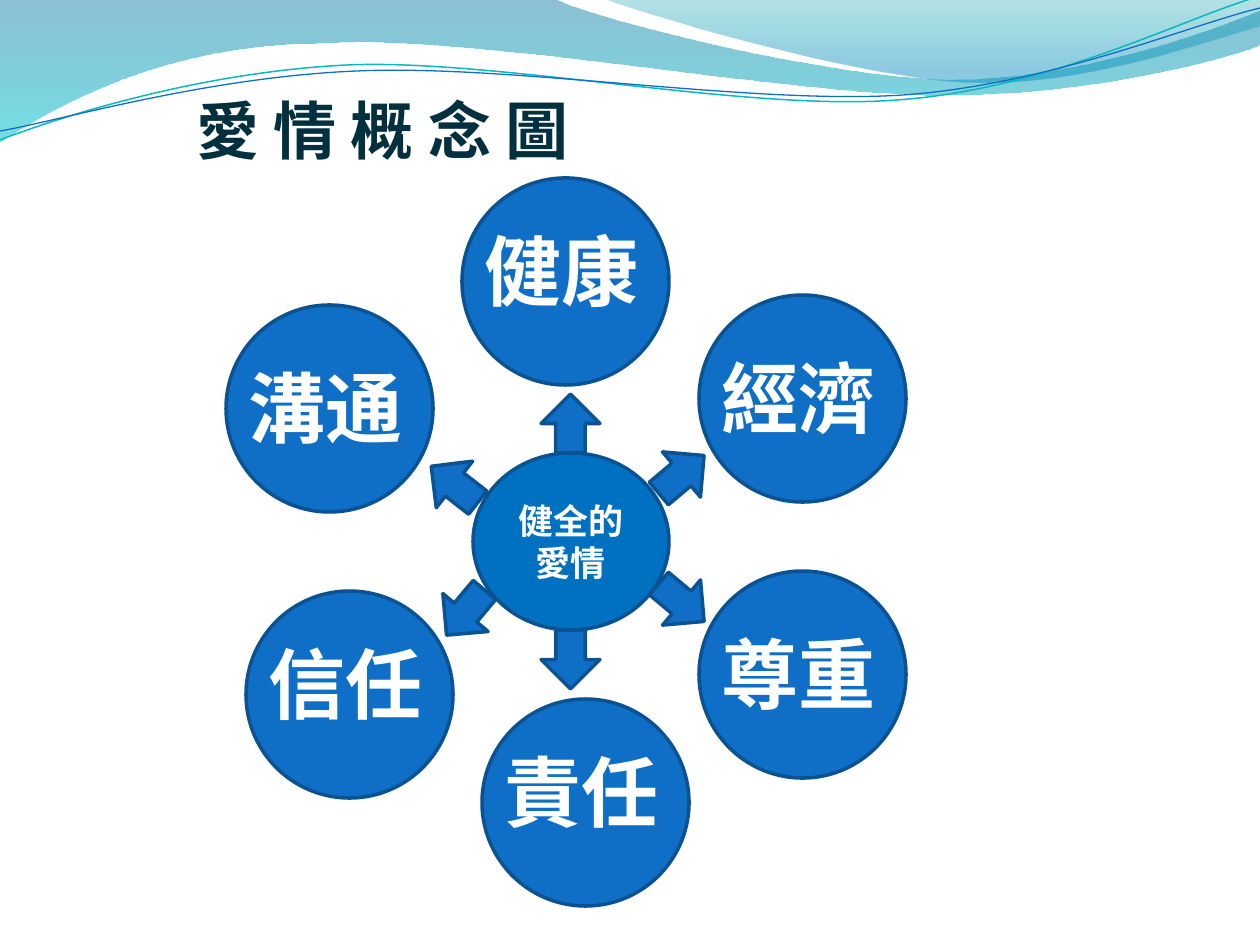
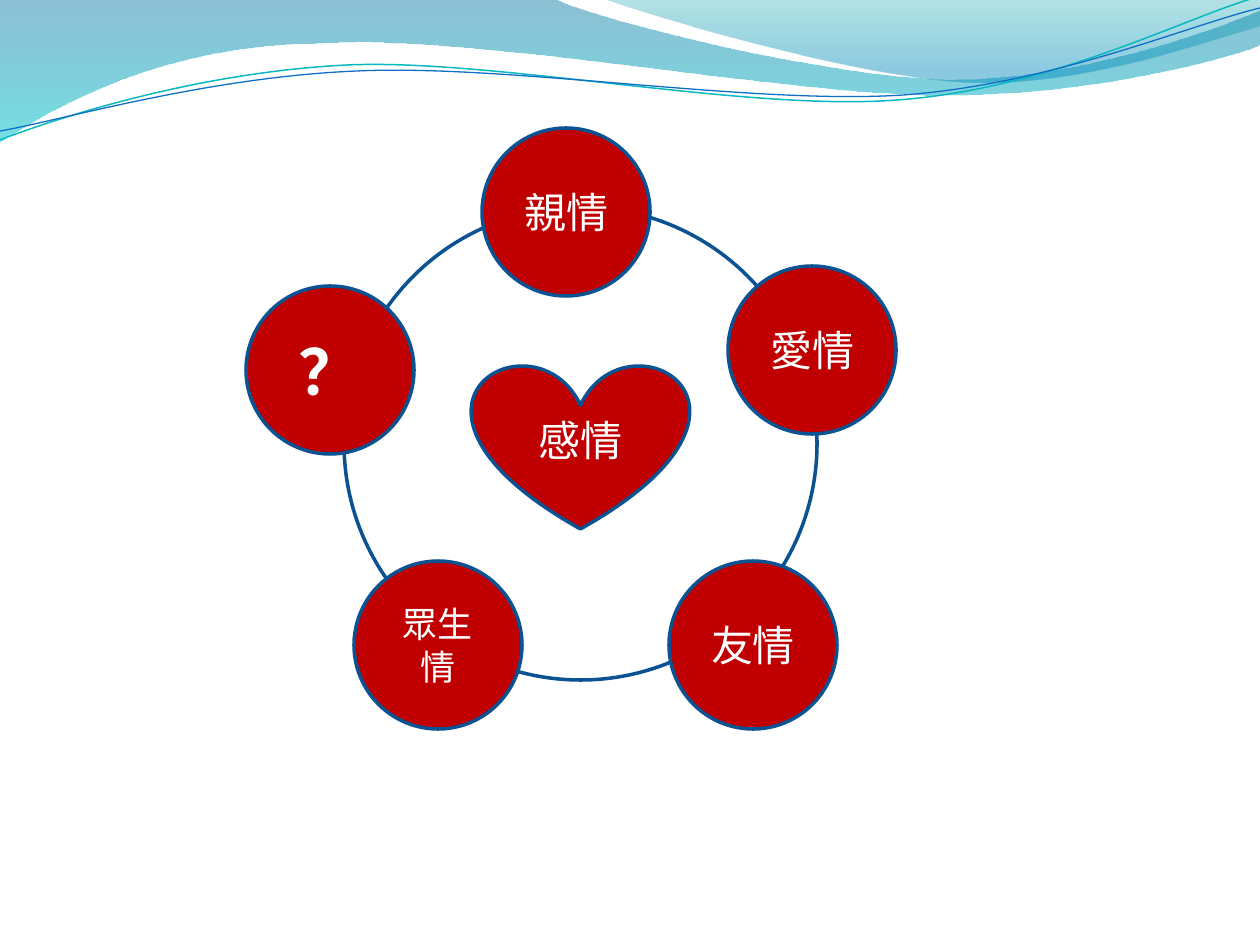
import math
from lxml import etree
from pptx import Presentation, util as u
from pptx.dml import color
from pptx.enum import shapes, text
from pptx.oxml import ns

SCALE = 914400 / 126  # EMU in one px
CJK_FONT = "Noto Sans CJK SC"
LATIN_FONT = "Cambria"
WHITE, INK = "FFFFFF", "02303E"
BLUE, OUTLINE, CORE_BLUE = "0F6FC6", "0B5292", "0070C0"
TEAL, RED = "0AB8BF", "C00000"
KIND = shapes.MSO_SHAPE
WAVE_TILT = 357.3

# Waves: a start point, then straight steps (2 numbers) or curves (6 numbers)
BAND = [(0, -1), (554, -1), (600, 21, 837, 79, 955, 79),
        (1075, 79, 1207, 33, 1260, 11), (1261, 45),
        (1239, 55, 1096, 96, 940, 95), (784, 95, 481, 35, 324, 43),
        (163, 44, 58, 105, -1, 142)]
CORNER = [(604, -1), (641, 14, 859, 78, 969, 82),
          (1079, 87, 1211, 40, 1260, 26), (1260, 0)]
TEAL_WAVE = [(0, 140), (60, 117, 199, 72, 349, 65),
             (498, 59, 747, 112, 898, 100), (1050, 89, 1182, 19, 1257, -3)]
BLUE_WAVE = [(0, 131), (59, 121, 207, 77, 357, 71),
             (508, 64, 752, 105, 903, 95), (1053, 84, 1186, 26, 1260, 8)]


def px(length):
    return u.Emu(round(length * SCALE))


def rgb(value):
    return color.RGBColor.from_string(value)


def add_text(holder, words, size, font=CJK_FONT, hue=WHITE, bold=False):
    para = holder.text_frame.paragraphs[0]
    span = para.add_run()
    span.text = words
    span.font.size = u.Pt(size)
    span.font.bold = bold
    span.font.name = font
    span.font.color.rgb = rgb(hue)
    east_asian = etree.SubElement(span.font._element, ns.qn("a:ea"))
    east_asian.set("typeface", CJK_FONT)
    return para


def add_label(parent, left, top, width, height, words, size, wrap=True, hue=WHITE):
    box = parent.shapes.add_textbox(px(left), px(top), px(width), px(height))
    box.text_frame.word_wrap = wrap
    add_text(box, words, size, hue=hue, bold=True)


def add_figure(parent, kind, left, top, width, height, fill, turn=0):
    figure = parent.shapes.add_shape(kind, px(left), px(top), px(width), px(height))
    figure.shadow.inherit = False
    figure.fill.solid()
    figure.fill.fore_color.rgb = rgb(fill)
    figure.line.color.rgb = rgb(OUTLINE)
    figure.line.width = u.Pt(2)
    figure.rotation = turn
    return figure


def add_centred_text(figure, words, size, font, bold=False):
    figure.text_frame.word_wrap = True
    figure.text_frame.vertical_anchor = text.MSO_ANCHOR.MIDDLE
    para = add_text(figure, words, size, font, bold=bold)
    para.alignment = text.PP_ALIGN.CENTER


# Waves at the top of every slide
def level(point, centre):
    """Turn a point back by the tilt that the finished wave gets."""
    angle = math.radians(360 - WAVE_TILT)
    dx, dy = point[0] - centre[0], point[1] - centre[1]
    return (centre[0] + dx * math.cos(angle) - dy * math.sin(angle),
            centre[1] + dx * math.sin(angle) + dy * math.cos(angle))


def add_outline(parent, outline, close, centre=None):
    points = [move[i:i + 2] for move in outline for i in range(0, len(move), 2)]
    if centre:
        points = [level(point, centre) for point in points]
    points = [(px(x), px(y)) for x, y in points]
    builder = parent.shapes.build_freeform(*points[0])
    builder.add_line_segments(points[1:], close=close)
    figure = builder.convert_to_shape()
    figure.shadow.inherit = False
    # Join each run of three steps that stands for one curve
    steps = iter(list(figure._element.iter(ns.qn("a:lnTo"))))
    for move in outline[1:]:
        group = [next(steps) for _ in range(len(move) // 2)]
        if len(group) == 3:
            curve = etree.Element(ns.qn("a:cubicBezTo"))
            group[0].addprevious(curve)
            for step in group:
                curve.append(step[0])
                step.getparent().remove(step)
    return figure


def add_gradient_wave(page, outline, stops):
    wave = add_outline(page, outline, True)
    wave.line.fill.background()
    wave.fill.gradient()
    wave.fill.gradient_angle = 270
    for stop, (position, hue, _) in zip(wave.fill.gradient_stops, stops):
        stop.position = position
        stop.color.rgb = rgb(hue)
    colours = wave._element.spPr.iter(ns.qn("a:srgbClr"))
    for colour, (_, _, opacity) in zip(colours, stops):
        etree.SubElement(colour, ns.qn("a:alpha")).set("val", str(opacity * 1000))


def add_line_wave(parent, outline, centre, hue, width):
    wave = add_outline(parent, outline, False, centre)
    wave.rotation = WAVE_TILT
    wave.fill.background()
    wave.line.color.rgb = rgb(hue)
    wave.line.width = u.Pt(width)


def add_waves(page):
    add_gradient_wave(page, BAND, [(0, "0074A1", 45), (1, "00C6CF", 55)])
    add_gradient_wave(page, CORNER, [(0, "00A1A9", 30), (0.8, "008BBF", 45)])
    lines = page.shapes.add_group_shape()
    add_line_wave(lines, TEAL_WAVE, (629, 72), TEAL, 0.85)
    add_line_wave(lines, BLUE_WAVE, (629, 74), BLUE, 0.75)


# Six themes around sound love
def add_core(page, left, top):
    core = add_figure(page, KIND.OVAL, left + 246, top + 275, 196, 177, CORE_BLUE)
    add_centred_text(core, "健全的愛情", 20, CJK_FONT, bold=True)


def add_themes(page, left, top):
    arrows = page.shapes.add_group_shape()
    for x, y, turn in [(314, 216, 0), (425, 267, 50), (198, 277, 308),
                       (425, 395, 130), (314, 452, 180), (209, 405, 220)]:
        add_figure(arrows, KIND.UP_ARROW, left + x, top + y, 59, 59, BLUE, turn)
    themes = [("健康", 235, 0, 39), ("經濟", 472, 117, 49), ("尊重", 472, 393, 49),
              ("責任", 255, 521, 39), ("信任", 19, 413, 39), ("溝通", -1, 127, 49)]
    for words, x, y, drop in themes:
        theme = page.shapes.add_group_shape()
        add_figure(theme, KIND.OVAL, left + x, top + y, 207, 207, BLUE)
        add_label(theme, left + x + 10, top + y + drop, 187, 106, words, 44)


# Five kinds of affection on a ring
def add_affection_ring(page, left, top):
    centre = page.shapes.add_group_shape()
    add_figure(centre, KIND.OVAL, left + 98, top + 78, 473, 473, WHITE)
    heart = add_figure(centre, KIND.HEART, left + 226, top + 235, 217, 165, RED)
    add_centred_text(heart, "感情", 24, LATIN_FONT)
    kinds = [("親情", 236, -1, 24), ("愛情", 482, 137, 24), ("友情", 423, 432, 24),
             ("眾生情", 108, 432, 20), ("？", 0, 157, 36)]
    for words, x, y, size in kinds:
        node = add_figure(page, KIND.OVAL, left + x, top + y, 168, 168, RED)
        add_centred_text(node, words, size, LATIN_FONT, bold=words == "？")


def add_page(deck):
    page = deck.slides.add_slide(deck.slide_layouts[6])
    add_waves(page)
    return page


def main():
    deck = Presentation()
    deck.slide_width, deck.slide_height = px(1260), px(945)

    love_page = add_page(deck)
    add_core(love_page, 227, 178)
    add_label(love_page, 184, 85, 471, 89, "愛 情 概 念 圖", 36, wrap=False, hue=INK)
    add_themes(love_page, 227, 178)

    affection_page = add_page(deck)
    add_affection_ring(affection_page, 246, 129)

    deck.save("out.pptx")


if __name__ == "__main__":
    main()
